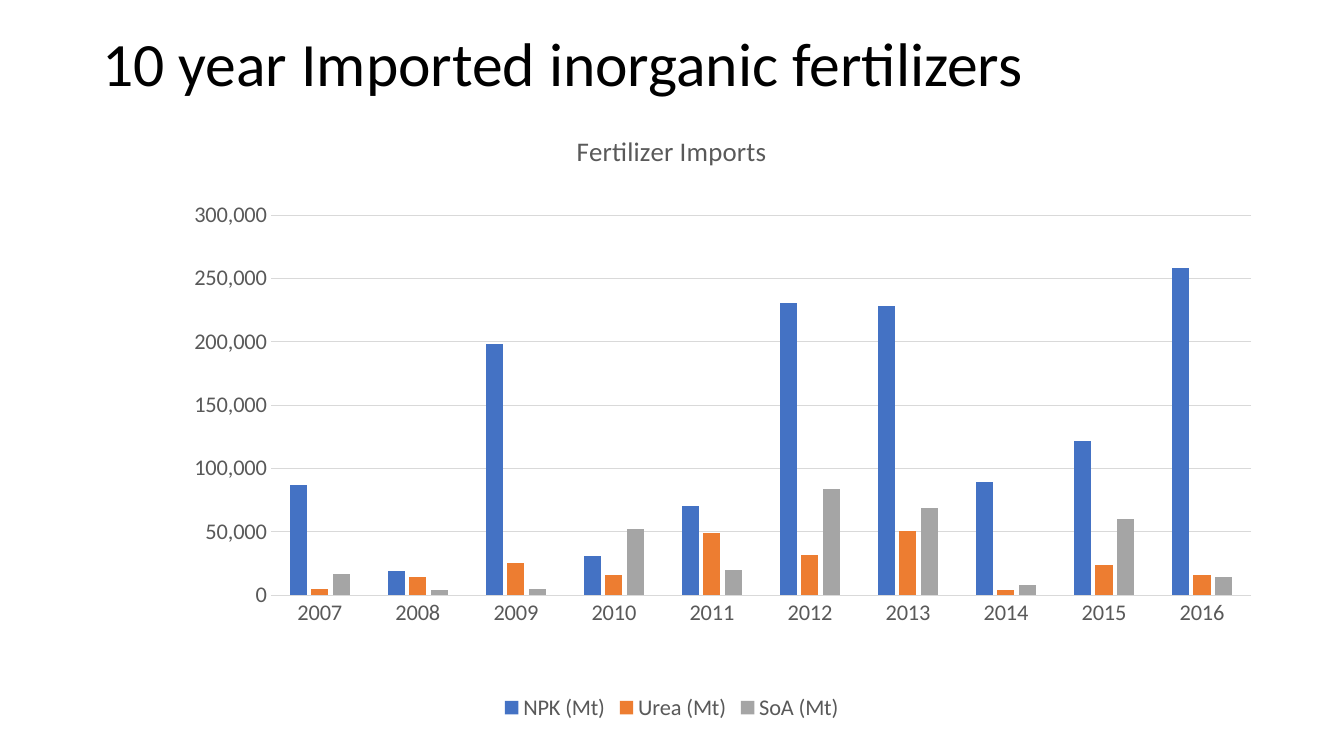
from lxml import etree
from pptx import Presentation
from pptx.chart.data import CategoryChartData
from pptx.dml.color import RGBColor
from pptx.enum.chart import XL_CHART_TYPE, XL_LEGEND_POSITION, XL_TICK_MARK
from pptx.enum.text import MSO_ANCHOR, PP_ALIGN
from pptx.oxml.ns import qn
from pptx.util import Pt

COLUMNS = XL_CHART_TYPE.COLUMN_CLUSTERED
BOTTOM = XL_LEGEND_POSITION.BOTTOM
NO_TICKS = XL_TICK_MARK.NONE
MIDDLE = MSO_ANCHOR.MIDDLE
LEFT = PP_ALIGN.LEFT

BLACK = RGBColor(0x00, 0x00, 0x00)
GRAY_TEXT = RGBColor(0x59, 0x59, 0x59)
GRID_GRAY = RGBColor(0xD9, 0xD9, 0xD9)
BLUE = RGBColor(0x44, 0x72, 0xC4)
ORANGE = RGBColor(0xED, 0x7D, 0x31)
SILVER = RGBColor(0xA5, 0xA5, 0xA5)
FONT = "Calibri"

HEADING = "10 year Imported inorganic fertilizers"
CHART_TITLE = "Fertilizer Imports"
YEARS = [str(year) for year in range(2007, 2017)]
IMPORTS = [
    ("NPK (Mt)", BLUE, [87000, 19000, 198000, 31000, 70000,
                        231000, 228000, 89000, 122000, 258000]),
    ("Urea (Mt)", ORANGE, [5000, 14000, 25000, 16000, 49000,
                           32000, 51000, 4000, 24000, 16000]),
    ("SoA (Mt)", SILVER, [17000, 4000, 5000, 52000, 20000,
                          84000, 69000, 8000, 60000, 14000]),
]

SLIDE_WIDTH, SLIDE_HEIGHT = 960, 540
MARGIN = 66
CONTENT_WIDTH = SLIDE_WIDTH - 2 * MARGIN
HEADING_TOP, HEADING_HEIGHT = 16, 62.5
CHART_TOP = HEADING_TOP + HEADING_HEIGHT
CHART_HEIGHT = 440
PLOT_LAYOUT = {
    "layoutTarget": "inner", "xMode": "edge", "yMode": "edge",
    "x": 0.154, "y": 0.171, "w": 0.846, "h": 0.617,
}


def set_all(target, values):
    for name, value in values.items():
        setattr(target, name, value)


def style_font(font, size, color):
    set_all(font, {"name": FONT, "size": Pt(size), "bold": False})
    font.color.rgb = color


def style_line(line):
    line.color.rgb = GRID_GRAY
    line.width = Pt(0.75)


def place_plot(chart):
    plot_area = chart.plots[0]._element.getparent()
    for old in plot_area.findall(qn("c:layout")):
        plot_area.remove(old)
    layout = etree.Element(qn("c:layout"))
    manual = etree.SubElement(layout, qn("c:manualLayout"))
    for tag, value in PLOT_LAYOUT.items():
        etree.SubElement(manual, qn(f"c:{tag}")).set("val", str(value))
    plot_area.insert(0, layout)


def add_heading(slide):
    heading = slide.shapes.title
    set_all(heading, {
        "left": Pt(MARGIN), "top": Pt(HEADING_TOP),
        "width": Pt(CONTENT_WIDTH), "height": Pt(HEADING_HEIGHT),
    })
    heading.text_frame.text = HEADING
    set_all(heading.text_frame, {"vertical_anchor": MIDDLE, "word_wrap": True})
    paragraph = heading.text_frame.paragraphs[0]
    set_all(paragraph, {"alignment": LEFT, "line_spacing": 0.9})
    style_font(paragraph.runs[0].font, 44, BLACK)


def add_imports_chart(slide):
    imports = CategoryChartData(number_format="#,##0")
    imports.categories = YEARS
    for name, _, tonnes in IMPORTS:
        imports.add_series(name, tonnes)
    chart = slide.shapes.add_chart(
        COLUMNS, Pt(MARGIN), Pt(CHART_TOP),
        Pt(CONTENT_WIDTH), Pt(CHART_HEIGHT), imports).chart
    style_font(chart.font, 16, GRAY_TEXT)

    chart.has_title = True
    chart_title = chart.chart_title
    chart_title.include_in_layout = False
    chart_title.text_frame.text = CHART_TITLE
    style_font(chart_title.text_frame.paragraphs[0].runs[0].font, 19.2, GRAY_TEXT)

    chart.has_legend = True
    set_all(chart.legend, {"position": BOTTOM, "include_in_layout": False})
    style_font(chart.legend.font, 16, GRAY_TEXT)

    years, tonnage = chart.category_axis, chart.value_axis
    for axis in (years, tonnage):
        set_all(axis, {"major_tick_mark": NO_TICKS, "minor_tick_mark": NO_TICKS})
        style_font(axis.tick_labels.font, 16, GRAY_TEXT)
    style_line(years.format.line)
    set_all(tonnage, {"minimum_scale": 0, "maximum_scale": 300000,
                      "major_unit": 50000, "has_major_gridlines": True})
    tonnage.format.line.fill.background()
    style_line(tonnage.major_gridlines.format.line)
    set_all(tonnage.tick_labels, {"number_format": "#,##0",
                                  "number_format_is_linked": False})

    columns = chart.plots[0]
    set_all(columns, {"gap_width": 219, "overlap": -27, "vary_by_categories": False})
    for series, (_, color, _) in zip(columns.series, IMPORTS):
        series.invert_if_negative = False
        series.format.fill.solid()
        series.format.fill.fore_color.rgb = color
    place_plot(chart)


def main():
    deck = Presentation()
    set_all(deck, {"slide_width": Pt(SLIDE_WIDTH), "slide_height": Pt(SLIDE_HEIGHT)})
    slide = deck.slides.add_slide(deck.slide_layouts[5])
    add_heading(slide)
    add_imports_chart(slide)
    deck.save("out.pptx")


if __name__ == "__main__":
    main()
